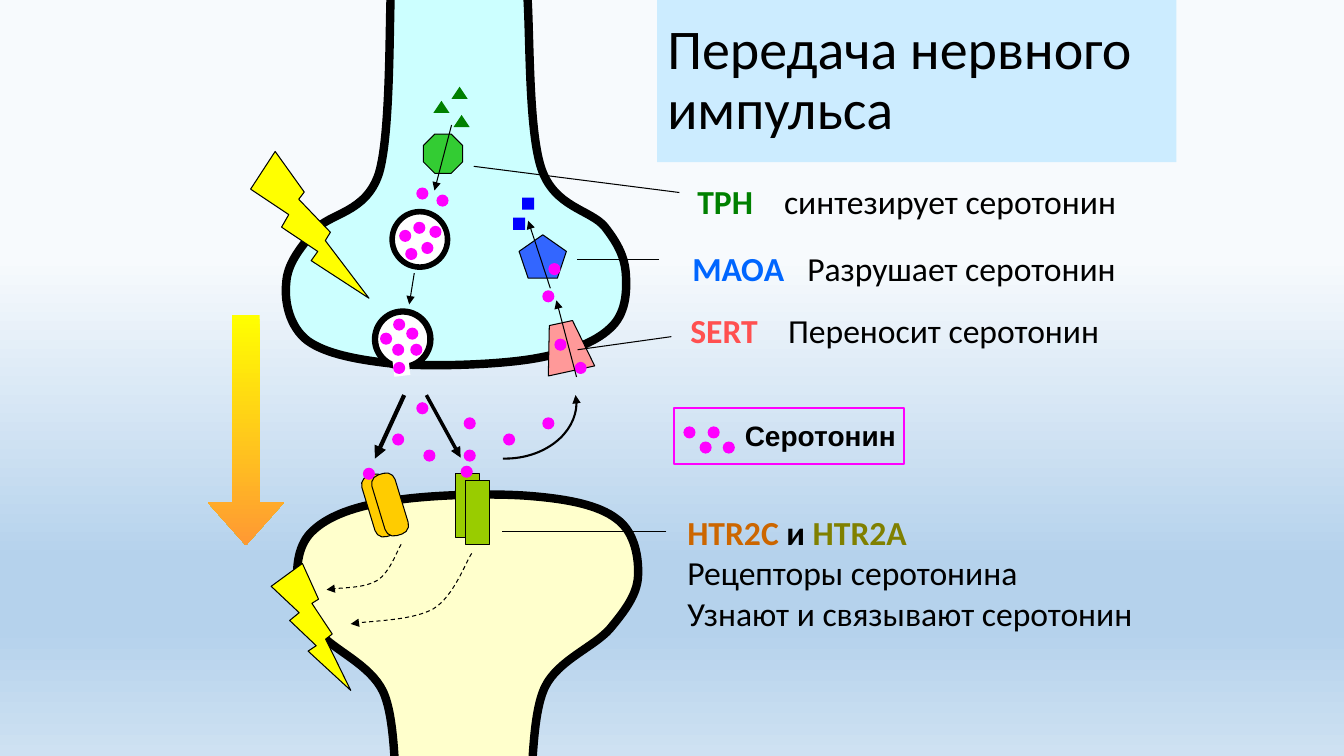
from lxml import etree
from pptx import Presentation
from pptx.dml.color import RGBColor
from pptx.enum.dml import MSO_LINE
from pptx.enum.shapes import MSO_CONNECTOR, MSO_SHAPE as Preset
from pptx.enum.text import MSO_ANCHOR, MSO_AUTO_SIZE, PP_ALIGN
from pptx.oxml.ns import qn
from pptx.util import Inches, Pt

COLORS = {
    "black": "000000", "white": "FFFFFF", "title": "CCECFF",
    "serotonin": "FF00FF", "axon": "CCFFFF", "dendrite": "FFFFCC",
    "tph": "33CC33", "tph_text": "008000", "maoa": "3366FF", "maoa_text": "0066FF",
    "sert": "FF9999", "sert_text": "FF5050", "fragment": "0000FF",
    "htr2c": "FFCC00", "htr2c_text": "CC6600", "htr2a": "99CC00",
    "htr2a_text": "808000", "bolt": "FFFF00", "arrow_end": "FF9933",
    "sky": "F7FAFD", "mid_blue": "B5D2EC", "pale_blue": "CEE1F2",
}
DOT = 0.12

# Outlines: a start point, then Bezier segments (control, control, end)
AXON = (3.88, -0.12), [
    (3.86, 0.18, 3.88, 1.32, 3.76, 1.72), (3.63, 2.12, 3.27, 2.11, 3.12, 2.29),
    (2.97, 2.47, 2.85, 2.62, 2.84, 2.81), (2.82, 2.99, 2.87, 3.24, 3.05, 3.38),
    (3.23, 3.51, 3.54, 3.57, 3.91, 3.61), (4.29, 3.64, 4.93, 3.62, 5.29, 3.56),
    (5.64, 3.5, 5.9, 3.4, 6.05, 3.26), (6.21, 3.12, 6.22, 2.9, 6.21, 2.73),
    (6.2, 2.56, 6.14, 2.43, 6, 2.25), (5.86, 2.08, 5.5, 2.06, 5.37, 1.67),
    (5.24, 1.28, 5.26, 0.29, 5.23, -0.07)]
DENDRITE = (5.26, 7.81), [
    (5.29, 7.64, 5.28, 7.07, 5.41, 6.81), (5.54, 6.55, 5.89, 6.42, 6.05, 6.24),
    (6.2, 6.06, 6.32, 5.9, 6.33, 5.72), (6.34, 5.54, 6.3, 5.28, 6.12, 5.15),
    (5.94, 5.01, 5.63, 4.95, 5.25, 4.92), (4.88, 4.89, 4.23, 4.91, 3.88, 4.97),
    (3.52, 5.02, 3.26, 5.12, 3.11, 5.26), (2.95, 5.4, 2.94, 5.63, 2.95, 5.8),
    (2.96, 5.97, 3.02, 6.1, 3.16, 6.27), (3.31, 6.45, 3.67, 6.59, 3.8, 6.86),
    (3.92, 7.12, 3.91, 7.64, 3.94, 7.85)]
REUPTAKE = (4.99, 4.55), [(5, 4.55, 5, 4.55, 5.01, 4.55), (5.4, 4.55, 5.72, 4.3, 5.72, 3.99),
                          (5.72, 3.97, 5.72, 3.95, 5.71, 3.92)]
SIGNALS = [
    ((3.98, 5.4), [(3.94, 5.46, 3.87, 5.68, 3.74, 5.76), (3.62, 5.83, 3.35, 5.83, 3.24, 5.85)]),
    ((4.68, 5.49), [(4.62, 5.58, 4.5, 5.92, 4.3, 6.04), (4.1, 6.15, 3.65, 6.16, 3.48, 6.19)]),
]


def rgb(name):
    return RGBColor.from_string(COLORS[name])


def paint_gradient(fill, element, stops):
    fill.gradient()
    fill.gradient_angle = 270
    stop_list = element.find(".//" + qn("a:gsLst"))
    for stop in list(stop_list):
        stop_list.remove(stop)
    for percent, name in stops:
        stop = etree.SubElement(stop_list, qn("a:gs"), pos=str(percent * 1000))
        etree.SubElement(stop, qn("a:srgbClr"), val=COLORS[name])


def style(shape, fill=None, line=None, color="black"):
    shape.shadow.inherit = False
    if fill:
        shape.fill.solid()
        shape.fill.fore_color.rgb = rgb(fill)
    else:
        shape.fill.background()
    if line:
        shape.line.width = Pt(line)
        shape.line.color.rgb = rgb(color)
    else:
        shape.line.fill.background()


def add_preset(slide, preset, box, fill=None, line=None, color="black", rotation=0, adjustments=()):
    shape = slide.shapes.add_shape(preset, *map(Inches, box))
    style(shape, fill, line, color)
    shape.rotation = rotation
    for index, value in enumerate(adjustments):
        shape.adjustments[index] = value
    return shape


def add_dots(slide, corners, preset=Preset.OVAL, fill="serotonin", width=DOT):
    for left, top in corners:
        add_preset(slide, preset, (left, top, width, DOT), fill)


def add_arrowhead(line):
    etree.SubElement(line.line._get_or_add_ln(), qn("a:tailEnd"), type="triangle")


def add_line(slide, start, end, width=0.75, arrow=False):
    line = slide.shapes.add_connector(MSO_CONNECTOR.STRAIGHT, *map(Inches, start + end))
    line.line.width = Pt(width)
    line.line.color.rgb = rgb("black")
    if arrow:
        add_arrowhead(line)
    etree.SubElement(line._element.spPr, qn("a:effectLst"))


def add_outline(slide, points, fill=None, line=0.75):
    corners = [(Inches(x), Inches(y)) for x, y in points]
    builder = slide.shapes.build_freeform(*corners[0])
    builder.add_line_segments(corners[1:], close=fill is not None)
    shape = builder.convert_to_shape()
    style(shape, fill, line)
    return shape


def add_curve(slide, start, segments, fill=None, line=0.75):
    points = [start] + [pair for s in segments for pair in zip(s[::2], s[1::2])]
    shape = add_outline(slide, points, fill, line)
    # Turn every three straight steps into one Bezier segment
    outline = shape._element.find(".//" + qn("a:path"))
    steps = outline.findall(qn("a:lnTo"))
    for first in range(0, len(steps), 3):
        bezier = etree.Element(qn("a:cubicBezTo"))
        steps[first].addprevious(bezier)
        for step in steps[first:first + 3]:
            bezier.append(step[0])
            outline.remove(step)
    return shape


def add_runs(paragraph, runs, size=24, font="Calibri"):
    paragraph.font.size = Pt(size)
    paragraph.font.name = font
    for text, color, bold in runs:
        run = paragraph.add_run()
        run.text = text
        run.font.bold = bold
        run.font.color.rgb = rgb(color)


def add_text(slide, box, runs, tab=None, **font):
    frame = slide.shapes.add_textbox(*map(Inches, box)).text_frame
    frame.word_wrap = True
    add_runs(frame.paragraphs[0], runs, **font)
    if tab:
        properties = frame.paragraphs[0]._p.get_or_add_pPr()
        tabs = etree.Element(qn("a:tabLst"))
        etree.SubElement(tabs, qn("a:tab"), pos=str(Inches(tab)), algn="l")
        properties.insert(0, tabs)
    return frame


def add_title(slide):
    title = slide.shapes.title
    title.left, title.top, title.width, title.height = map(Inches, (6.52, 0, 5.15, 1.61))
    title.fill.solid()
    title.fill.fore_color.rgb = rgb("title")
    frame = title.text_frame
    frame.word_wrap = True
    frame.auto_size = MSO_AUTO_SIZE.NONE
    frame.vertical_anchor = MSO_ANCHOR.MIDDLE
    paragraph = frame.paragraphs[0]
    paragraph.alignment = PP_ALIGN.LEFT
    paragraph.line_spacing = 0.9
    add_runs(paragraph, [("Передача нервного импульса", "black", False)], size=40)


def add_labels(slide):
    for left, top, width, name, color, tab, role in (
            (6.75, 3.03, 4.27, "SERT", "sert_text", 0.97, "Переносит серотонин"),
            (6.77, 2.41, 4.42, "МАОA", "maoa_text", 1.14, "Разрушает серотонин"),
            (6.82, 1.75, 4.36, "TPH", "tph_text", 0.86, "синтезирует серотонин")):
        add_text(slide, (left, top, width, 0.5),
                 [(name, color, True), ("\t" + role, "black", False)], tab)
    receptors = add_text(slide, (6.72, 5.03, 4.74, 1.31), [
        ("HTR2C", "htr2c_text", True), (" и ", "black", True), ("HTR2A", "htr2a_text", True)])
    paragraph = receptors.add_paragraph()
    add_runs(paragraph, [("Рецепторы серотонина", "black", False)])
    paragraph.add_line_break()
    add_runs(paragraph, [("Узнают и связывают серотонин", "black", False)])
    # Legend
    add_text(slide, (7.29, 4.1, 1.71, 0.43), [("Серотонин", "black", True)], size=20, font="Arial")
    add_dots(slide, [(6.78, 4.23), (7.02, 4.23), (6.94, 4.38), (7.17, 4.38)])
    add_preset(slide, Preset.RECTANGLE, (6.69, 4.05, 2.28, 0.55), line=1.5, color="serotonin")


def add_axon(slide):
    add_curve(slide, *AXON, "axon", 6)
    # Vesicles
    add_preset(slide, Preset.OVAL, (3.72, 3.09, 0.55, 0.55), "white", 4.5)
    add_preset(slide, Preset.RECTANGLE, (3.88, 3.55, 0.2, 0.16), "white", rotation=83.2)
    add_dots(slide, [(4.03, 3.25), (4.07, 3.41), (3.89, 3.41), (3.77, 3.3), (3.9, 3.16), (3.9, 3.59)])
    add_preset(slide, Preset.OVAL, (3.89, 2.1, 0.55, 0.55), "white", 4)
    add_dots(slide, [(4.1, 2.2), (4.26, 2.24), (4.18, 2.4), (4.02, 2.46), (3.96, 2.28)])
    add_line(slide, (4.11, 2.71), (4.06, 3.02), arrow=True)
    # SERT transporter
    add_outline(slide, [(5.9, 3.63), (5.68, 3.18), (5.45, 3.23), (5.44, 3.73)], "sert")
    add_dots(slide, [(5.7, 3.59), (5.5, 3.36), (5.38, 2.88)])
    add_line(slide, (5.72, 3.74), (5.52, 2.98), arrow=True)
    add_line(slide, (6.66, 3.34), (5.73, 3.47))
    # MAOA enzyme
    add_preset(slide, Preset.REGULAR_PENTAGON, (5.15, 2.33, 0.47, 0.43), "maoa", 0.75)
    add_dots(slide, [(5.44, 2.61)])
    add_dots(slide, [(5.09, 2.16), (5.18, 1.96)], Preset.RECTANGLE, "fragment")
    add_line(slide, (5.46, 2.86), (5.24, 2.19), arrow=True)
    add_line(slide, (6.54, 2.57), (5.72, 2.57))
    # TPH enzyme
    add_preset(slide, Preset.OCTAGON, (4.2, 1.33, 0.39, 0.39), "tph", 0.75)
    add_dots(slide, [(4.3, 1), (4.5, 1.14), (4.48, 0.86)], Preset.ISOSCELES_TRIANGLE, "tph_text", 0.16)
    add_dots(slide, [(4.13, 1.86), (4.33, 1.93)])
    add_line(slide, (4.48, 1.24), (4.31, 1.89), arrow=True)
    add_line(slide, (6.74, 1.91), (4.7, 1.65))
    add_preset(slide, Preset.LIGHTNING_BOLT, (2.61, 1.45, 0.85, 1.65), "bolt", 0.75, rotation=344.8)


def add_cleft(slide):
    add_dots(slide, [(4.6, 4.14), (4.99, 4.3), (4.6, 4.46), (4.2, 4.46), (4.13, 3.99),
                     (5.38, 4.14), (3.89, 4.3)])
    add_arrowhead(add_curve(slide, *REUPTAKE, line=1.5))
    add_line(slide, (4.01, 3.92), (3.72, 4.55), 3, arrow=True)
    add_line(slide, (4.23, 3.92), (4.57, 4.54), 2.5, arrow=True)
    arrow = add_preset(slide, Preset.DOWN_ARROW, (2.06, 3.12, 0.76, 2.29), adjustments=(0.358, 0.563))
    paint_gradient(arrow.fill, arrow._element, [(0, "bolt"), (100, "arrow_end")])


def add_dendrite(slide):
    add_curve(slide, *DENDRITE, "dendrite", 6)
    # Paired receptors, with serotonin bound to the rear ones
    for dots, left_c, top_c, left_a, top_a in (
            ([(3.6, 4.64), (4.57, 4.62)], 3.65, 4.7, 4.52, 4.7),
            ([], 3.75, 4.69, 4.62, 4.77)):
        add_preset(slide, Preset.ROUNDED_RECTANGLE, (left_c, top_c, 0.24, 0.63), "htr2c", 0.75,
                   rotation=343.1, adjustments=(0.382,))
        add_preset(slide, Preset.RECTANGLE, (left_a, top_a, 0.24, 0.63), "htr2a", 0.75)
        add_dots(slide, dots)
    add_preset(slide, Preset.LIGHTNING_BOLT, (2.69, 5.59, 0.79, 1.26), "bolt", 0.75)
    add_line(slide, (6.61, 5.27), (4.98, 5.27))
    for signal in SIGNALS:
        curve = add_curve(slide, *signal)
        curve.line.dash_style = MSO_LINE.DASH
        add_arrowhead(curve)


def main():
    presentation = Presentation()
    presentation.slide_width, presentation.slide_height = Inches(40 / 3), Inches(7.5)
    slide = presentation.slides.add_slide(presentation.slide_layouts[0])
    subtitle = slide.placeholders[1]._element
    subtitle.getparent().remove(subtitle)
    paint_gradient(slide.background.fill, slide._element,
                   [(34, "sky"), (74, "mid_blue"), (83, "mid_blue"), (100, "pale_blue")])
    add_title(slide)
    add_labels(slide)
    add_cleft(slide)
    add_axon(slide)
    add_dendrite(slide)
    presentation.save("out.pptx")


if __name__ == "__main__":
    main()
